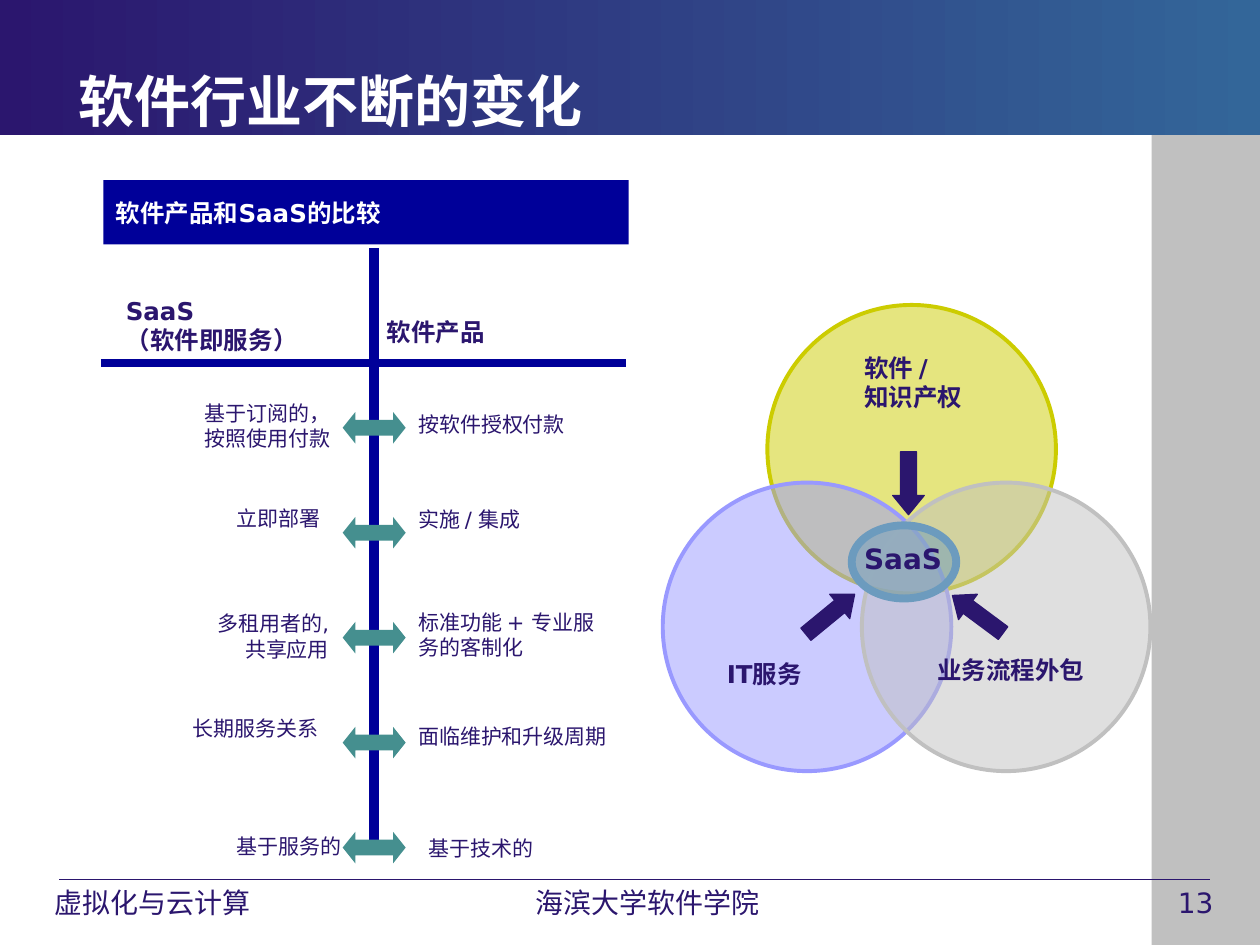
"""Build a slide comparing software products with SaaS beside a three-circle diagram."""
import lxml.etree
import pptx
import pptx.dml.color
import pptx.enum.shapes
import pptx.enum.text
import pptx.oxml.ns
import pptx.util

COLUMNS, ROWS = 100, 75
WIDTH, HEIGHT = pptx.util.Inches(10), pptx.util.Inches(7.5)
INK, NAVY, TEAL, WHITE, SILVER = "2B166E", "000099", "458F8F", "FFFFFF", "C0C0C0"
SHAPE = pptx.enum.shapes.MSO_SHAPE
ALIGN = pptx.enum.text.PP_ALIGN
ANCHOR = pptx.enum.text.MSO_ANCHOR
FIT = pptx.enum.text.MSO_AUTO_SIZE.SHAPE_TO_FIT_TEXT


def rgb(value):
    return pptx.dml.color.RGBColor.from_string(value)


def x_at(column):
    return round(WIDTH * column / COLUMNS)


def y_at(row):
    return round(HEIGHT * row / ROWS)


def place(box):
    left, top, width, height = box
    return x_at(left), y_at(top), x_at(width), y_at(height)


def write(tf, lines, size, color=INK, bold=False, align=ALIGN.LEFT):
    for i, line in enumerate(lines):
        p = tf.paragraphs[0] if i == 0 else tf.add_paragraph()
        p.alignment = align
        r = p.add_run()
        r.text = line
        r.font.name = "DejaVu Sans"
        r.font.size = pptx.util.Pt(size)
        r.font.bold = bold
        r.font.color.rgb = rgb(color)


def add_text(s, box, lines, size, wrap=True, **style):
    tf = s.shapes.add_textbox(*place(box)).text_frame
    tf.word_wrap = wrap
    tf.auto_size = FIT
    write(tf, lines, size, **style)


def add_shape(s, kind, box, fill, line=None, weight=0.75, alpha=None):
    sp = s.shapes.add_shape(kind, *place(box))
    sp.shadow.inherit = False
    sp.fill.solid()
    sp.fill.fore_color.rgb = rgb(fill)
    if alpha is not None:
        color = sp.element.spPr.find(".//" + pptx.oxml.ns.qn("a:srgbClr"))
        lxml.etree.SubElement(color, pptx.oxml.ns.qn("a:alpha"), val=str(alpha * 1000))
    if line:
        sp.line.color.rgb = rgb(line)
        sp.line.width = pptx.util.Pt(weight)
    else:
        sp.line.fill.background()
    return sp


def add_line(s, start, end, color, weight):
    line = s.shapes.add_connector(
        pptx.enum.shapes.MSO_CONNECTOR.STRAIGHT,
        x_at(start[0]), y_at(start[1]), x_at(end[0]), y_at(end[1]))
    line.line.color.rgb = rgb(color)
    line.line.width = pptx.util.Pt(weight)
    lxml.etree.SubElement(line.element.spPr, pptx.oxml.ns.qn("a:effectLst"))


def add_frame(s):
    add_shape(s, SHAPE.RECTANGLE, (91.4, 10.7, 8.6, 64.3), SILVER)
    add_line(s, (4.7, 69.8), (96, 69.8), INK, 0.75)
    band = add_shape(s, SHAPE.RECTANGLE, (0, 0, COLUMNS, 10.7), INK)
    band.fill.gradient()
    band.fill.gradient_angle = 0
    for stop, color in zip(band.fill.gradient_stops, (INK, "336699")):
        stop.color.rgb = rgb(color)
    add_text(s, (92.5, 69.8, 7.1, 3.5), ["13"], 16)
    add_text(s, (2.4, 69.8, 19.4, 3.5), ["虚拟化与云计算"], 16, align=ALIGN.CENTER)
    add_text(s, (40.1, 69.8, 22.6, 3.5), ["海滨大学软件学院"], 16, align=ALIGN.CENTER)


def add_title(s, text):
    title = s.shapes.title
    title.left, title.top, title.width, title.height = place((5.2, 1.7, 90, 12.5))
    title.text_frame.vertical_anchor = ANCHOR.MIDDLE
    write(title.text_frame, [text], 32, color=WHITE, bold=True)
    s.shapes._spTree.append(title.element)


def add_comparison(s):
    add_line(s, (8, 28.8), (49.7, 28.8), NAVY, 4.5)
    add_line(s, (29.7, 19.7), (29.7, 67.2), NAVY, 6)
    banner = add_shape(s, SHAPE.RECTANGLE, (8.2, 14.3, 41.7, 5.1), NAVY)
    banner.text_frame.vertical_anchor = ANCHOR.MIDDLE
    banner.text_frame.word_wrap = False
    write(banner.text_frame, ["软件产品和SaaS的比较"], 14, color=WHITE, bold=True)
    add_text(s, (9, 23, 19.9, 5.7), ["SaaS", "（软件即服务）"], 14, bold=True)
    add_text(s, (29.7, 24.7, 21.7, 3.3), ["软件产品"], 14, bold=True)
    pairs = [
        ((8, 31.3, 19.2, 5), ["基于订阅的，", "按照使用付款"],
         (32.2, 32.2, 17.5, 3), "按软件授权付款"),
        ((17.7, 39.6, 8.7, 3), ["立即部署"],
         (32.2, 39.7, 20, 3), "实施 / 集成"),
        ((16.1, 48, 11, 5), ["多租用者的,", "共享应用"],
         (32.2, 47.9, 17.5, 5), "标准功能 + 专业服务的客制化"),
        ((14.3, 56.3, 12, 3), ["长期服务关系"],
         (32.2, 56.9, 18.3, 3), "面临维护和升级周期"),
        ((8.9, 65.7, 19.2, 3), ["基于服务的"],
         (33, 65.8, 18.3, 3), "基于技术的"),
    ]
    for i, (left_box, service, right_box, product) in enumerate(pairs):
        add_text(s, left_box, service, 12, align=ALIGN.RIGHT)
        add_text(s, right_box, [product], 12)
        arrow = add_shape(s, SHAPE.LEFT_RIGHT_ARROW, (27.2, 32.7 + i * 8.33, 5, 2.5), TEAL)
        arrow.adjustments[1] = 0.4


def add_circles(s):
    for left, top, color in [(60.9, 24.2, "CCCC00"), (52.6, 38.3, "9999FF"),
                             (68.4, 38.3, SILVER)]:
        add_shape(s, SHAPE.OVAL, (left, top, 22.9, 22.9), color, color, 2.25, 50)
    add_text(s, (67.6, 27.5, 9.8, 5.7), ["软件 /", "知识产权"], 14, wrap=False, bold=True)
    add_text(s, (73.4, 51.5, 19, 3.3), ["业务流程外包"], 14, bold=True)
    add_text(s, (56.7, 51.8, 8.3, 3.3), ["IT服务"], 14, bold=True)
    add_shape(s, SHAPE.OVAL, (67.6, 41.7, 8.3, 5.8), "6C9BBE", "6C9BBE", 4.5, 50)
    add_text(s, (67.6, 42.5, 8.2, 3.7), ["SaaS"], 16, wrap=False, bold=True)
    for left, top, angle in [(63.4, 47.5, 320.6), (69.6, 37.1, 90), (75.1, 47.5, 216.6)]:
        arrow = add_shape(s, SHAPE.RIGHT_ARROW, (left, top, 5, 2.5), INK, INK)
        arrow.adjustments[1] = 0.61
        arrow.rotation = angle


def main():
    prs = pptx.Presentation()
    prs.slide_width, prs.slide_height = WIDTH, HEIGHT
    s = prs.slides.add_slide(prs.slide_layouts[5])
    add_frame(s)
    add_title(s, "软件行业不断的变化")
    add_comparison(s)
    add_circles(s)
    prs.save("out.pptx")


if __name__ == "__main__":
    main()
